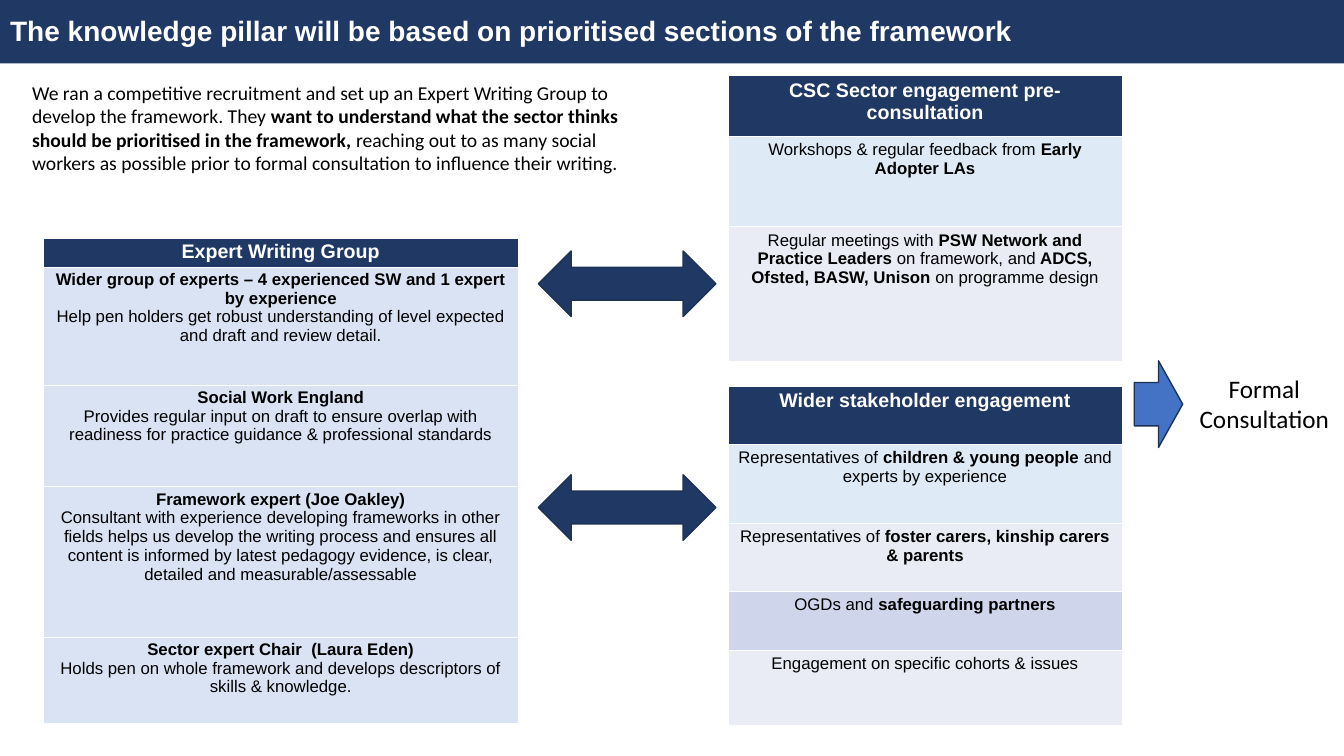
from dataclasses import dataclass

from lxml import etree
from pptx import Presentation
from pptx.dml.color import RGBColor
from pptx.enum.shapes import MSO_SHAPE
from pptx.enum.text import MSO_ANCHOR, MSO_AUTO_SIZE, PP_ALIGN
from pptx.oxml.ns import qn
from pptx.util import Inches, Pt

LEFT, CENTER = PP_ALIGN.LEFT, PP_ALIGN.CENTER
MIDDLE = MSO_ANCHOR.MIDDLE
NO_FIT = MSO_AUTO_SIZE.NONE
TWO_WAY, ONE_WAY = MSO_SHAPE.LEFT_RIGHT_ARROW, MSO_SHAPE.RIGHT_ARROW

NAVY, BLUE, EDGE = "203864", "4472C4", "1E3256"
WHITE, BLACK = "FFFFFF", "000000"
PALE, SKY, MIST, LILAC = "DAE3F3", "DEEBF7", "E9EBF5", "CFD5EA"


@dataclass
class Row:
    height: float
    text: str
    fill: str


@dataclass
class Panel:
    left: float
    top: float
    width: float
    pad_x: float
    pad_y: float
    rows: list[Row]


@dataclass
class Arrow:
    kind: MSO_SHAPE
    left: float
    top: float
    width: float
    height: float
    fill: str


@dataclass
class Note:
    left: float
    top: float
    width: float
    height: float
    text: str
    size: int
    align: PP_ALIGN


PANELS = [
    Panel(0.43, 2.36, 4.71, 0.07, 0.03, [
        Row(0.29, "*Expert Writing Group*", NAVY),
        Row(1.17, "*Wider group of experts – 4 experienced SW and 1 expert by experience*\n"
            "Help pen holders get robust understanding of level expected "
            "and draft and review detail.", PALE),
        Row(1.01, "*Social Work England*\n"
            "Provides regular input on draft to ensure overlap with "
            "readiness for practice guidance & professional standards", PALE),
        Row(1.49, "*Framework expert (Joe Oakley)*\n"
            "Consultant with experience developing frameworks in other fields helps us "
            "develop the writing process and ensures all content is informed by latest "
            "pedagogy evidence, is clear, detailed and measurable/assessable", PALE),
        Row(0.86, "*Sector expert Chair  (Laura Eden)*\n"
            "Holds pen on whole framework and develops descriptors of "
            "skills & knowledge.", PALE),
    ]),
    Panel(7.22, 0.75, 3.91, 0.07, 0.04, [
        Row(0.6, "*CSC Sector engagement pre-consultation*", NAVY),
        Row(0.9, "Workshops & regular feedback from *Early Adopter LAs*", SKY),
        Row(1.33, "Regular meetings with *PSW Network and Practice Leaders* on framework, "
            "and* ADCS, Ofsted, BASW, Unison* on programme design", MIST),
    ]),
    Panel(7.22, 3.83, 3.91, 0.08, 0.04, [
        Row(0.58, "*Wider stakeholder engagement*", NAVY),
        Row(0.78, "Representatives of *children & young people* and experts by experience", SKY),
        Row(0.68, "Representatives of *foster carers, kinship carers & parents*", MIST),
        Row(0.58, "OGDs and *safeguarding partners*", LILAC),
        Row(0.75, "Engagement on specific cohorts & issues", MIST),
    ]),
]

ARROWS = [
    Arrow(TWO_WAY, 5.34, 2.49, 1.76, 0.65, NAVY),
    Arrow(TWO_WAY, 5.34, 4.71, 1.76, 0.65, NAVY),
    Arrow(ONE_WAY, 11.25, 3.58, 0.48, 0.86, BLUE),
]

NOTES = [
    Note(0.22, 0.75, 6.07, 1.04,
         "We ran a competitive recruitment and set up an Expert Writing Group to develop the "
         "framework. They *want to understand what the sector thinks should be prioritised "
         "in the framework, *reaching out to as many social workers as possible prior to "
         "formal consultation to influence their writing.", 14, LEFT),
    Note(11.66, 3.65, 1.76, 0.71, "Formal Consultation", 18, CENTER),
]


def paint(target, color: str) -> None:
    target.fill.solid()
    target.fill.fore_color.rgb = RGBColor.from_string(color)


def write(frame, text: str, font: str, size: int, color: str, align: PP_ALIGN) -> None:
    """Fill a text frame; parts between asterisks are bold."""
    frame.word_wrap = True
    for i, line in enumerate(text.split("\n")):
        para = frame.paragraphs[0] if i == 0 else frame.add_paragraph()
        para.alignment = align
        para.font.name, para.font.size = font, Pt(size)
        para.font.color.rgb = RGBColor.from_string(color)
        for j, part in enumerate(line.split("*")):
            if part:
                run = para.add_run()
                run.text = part
                run.font.bold = j % 2 == 1


def edge(cell) -> None:
    """Give a cell thin white borders on all sides."""
    props = cell._tc.get_or_add_tcPr()
    for side in ("a:lnL", "a:lnR", "a:lnT", "a:lnB"):
        line = etree.SubElement(props, qn(side), w=str(Pt(0.54)))
        fill = etree.SubElement(line, qn("a:solidFill"))
        etree.SubElement(fill, qn("a:srgbClr"), val=WHITE)


def add_panel(slide, panel: Panel) -> None:
    total = sum(row.height for row in panel.rows)
    table = slide.shapes.add_table(
        len(panel.rows), 1, Inches(panel.left), Inches(panel.top),
        Inches(panel.width), Inches(total)).table
    table.first_row = table.horz_banding = False
    for i, row in enumerate(panel.rows):
        table.rows[i].height = Inches(row.height)
        cell = table.cell(i, 0)
        cell.margin_left = cell.margin_right = Inches(panel.pad_x)
        cell.margin_top = cell.margin_bottom = Inches(panel.pad_y)
        edge(cell)
        paint(cell, row.fill)
        size, color = (14, WHITE) if i == 0 else (12, BLACK)
        write(cell.text_frame, row.text, "Arial", size, color, CENTER)


def add_arrow(slide, arrow: Arrow) -> None:
    shape = slide.shapes.add_shape(
        arrow.kind, Inches(arrow.left), Inches(arrow.top),
        Inches(arrow.width), Inches(arrow.height))
    shape.shadow.inherit = False
    paint(shape, arrow.fill)
    shape.line.color.rgb = RGBColor.from_string(EDGE)
    shape.line.width = Pt(1)


def add_note(slide, note: Note) -> None:
    box = slide.shapes.add_textbox(
        Inches(note.left), Inches(note.top), Inches(note.width), Inches(note.height))
    write(box.text_frame, note.text, "Calibri", note.size, BLACK, note.align)


def set_title(slide, text: str) -> None:
    title = slide.shapes.title
    title.left, title.top = Inches(0), Inches(-0.02)
    title.width, title.height = Inches(13.33), Inches(0.65)
    paint(title, NAVY)
    title.text_frame.auto_size = NO_FIT
    title.text_frame.vertical_anchor = MIDDLE
    write(title.text_frame, text, "Arial", 20, WHITE, LEFT)


def main() -> None:
    deck = Presentation()
    deck.slide_width, deck.slide_height = Inches(13.33), Inches(7.5)
    slide = deck.slides.add_slide(deck.slide_layouts[5])
    set_title(slide, "*The knowledge pillar will be based on prioritised sections of the framework*")
    for panel in PANELS:
        add_panel(slide, panel)
    for arrow in ARROWS:
        add_arrow(slide, arrow)
    for note in NOTES:
        add_note(slide, note)
    deck.save("out.pptx")


if __name__ == "__main__":
    main()
